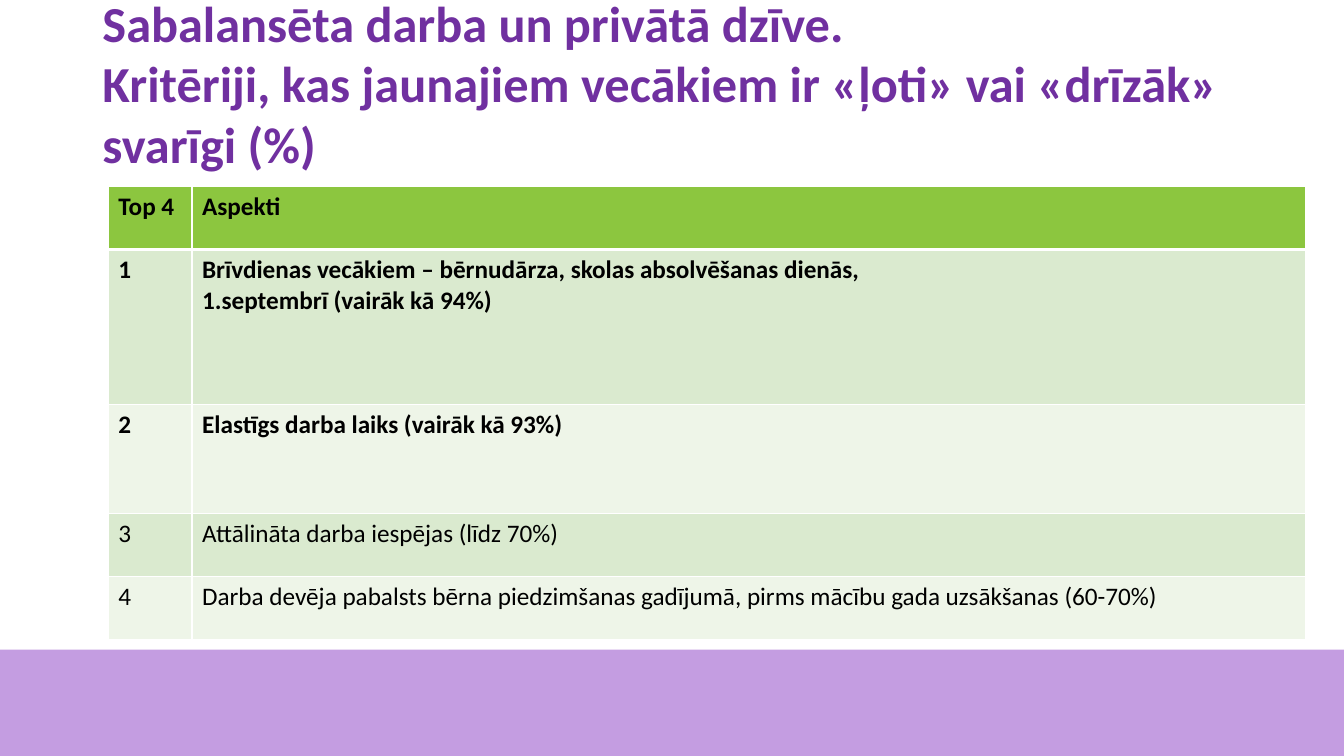
from lxml import etree
from pptx import Presentation
from pptx.dml.color import RGBColor
from pptx.enum import shapes, text
from pptx.oxml import ns
from pptx.util import Pt

PURPLE = RGBColor(0x70, 0x30, 0xA0)
LILAC = RGBColor(0xC4, 0x9D, 0xE1)
GREEN = RGBColor(0x8C, 0xC6, 0x3F)
PALE = RGBColor(0xDA, 0xEA, 0xCF)
LIGHT = RGBColor(0xEE, 0xF5, 0xE8)
BLACK = RGBColor(0, 0, 0)
WHITE = RGBColor(255, 255, 255)


def add_run(para, words, size, color, bold):
    run = para.add_run()
    run.text = words
    font = run.font
    font.name, font.size, font.bold = "Calibri", Pt(size), bold
    font.color.rgb = color


def add_edges(cell, top, base):
    """Draw white cell borders with the given top and bottom widths."""
    props = cell._tc.get_or_add_tcPr()
    edges = {"a:lnL": 1, "a:lnR": 1, "a:lnT": top, "a:lnB": base}
    for spot, (tag, width) in enumerate(edges.items()):
        line = etree.Element(ns.qn(tag), w=str(Pt(width)))
        fill = etree.SubElement(line, ns.qn("a:solidFill"))
        etree.SubElement(fill, ns.qn("a:srgbClr"), val=str(WHITE))
        props.insert(spot, line)


prs = Presentation()
prs.slide_width, prs.slide_height = Pt(960), Pt(540)
slide = prs.slides.add_slide(prs.slide_layouts[5])

band = slide.shapes.add_shape(
    shapes.MSO_SHAPE.RECTANGLE, Pt(0), Pt(464), Pt(960), Pt(76))
band.shadow.inherit = False
band.fill.solid()
band.fill.fore_color.rgb = LILAC
band.line.fill.background()

# Title
title = slide.shapes.title
title.left, title.top = Pt(66), Pt(28.8)
title.width, title.height = Pt(828), Pt(104.4)
frame = title.text_frame
frame.word_wrap = True
frame.auto_size = text.MSO_AUTO_SIZE.NONE
frame.vertical_anchor = text.MSO_ANCHOR.MIDDLE
frame.margin_bottom = Pt(47.6)  # lifts the centred heading
para = frame.paragraphs[0]
para.alignment = text.PP_ALIGN.LEFT
add_run(para, "Sabalansēta darba un privātā dzīve.", 36, PURPLE, True)
para.add_line_break()
add_run(para, "Kritēriji, kas jaunajiem vecākiem ir «ļoti» vai «drīzāk» "
        "svarīgi (%)", 36, PURPLE, True)

# Ranking: row height, rank, lines of the aspect
rows = [
    (45, "Top 4", ["Aspekti"]),
    (110.6, "1", [
        "Brīvdienas vecākiem – bērnudārza, skolas absolvēšanas dienās,",
        "1.septembrī (vairāk kā 94%)"]),
    (77.8, "2", ["Elastīgs darba laiks (vairāk kā 93%)"]),
    (45, "3", ["Attālināta darba iespējas (līdz 70%)"]),
    (45, "4", ["Darba devēja pabalsts bērna piedzimšanas gadījumā, "
               "pirms mācību gada uzsākšanas (60-70%)"]),
]
table = slide.shapes.add_table(
    len(rows), 2, Pt(77.4), Pt(133.2), Pt(855.4), Pt(323.4)).table
table.columns[0].width, table.columns[1].width = Pt(59.8), Pt(795.6)

for r, (height, rank, aspect) in enumerate(rows):
    table.rows[r].height = Pt(height)
    shade = GREEN if r == 0 else PALE if r % 2 else LIGHT
    for c, lines in enumerate([[rank], aspect]):
        cell = table.cell(r, c)
        cell.fill.solid()
        cell.fill.fore_color.rgb = shade
        add_edges(cell, 3 if r == 1 else 1, 3 if r == 0 else 1)
        frame = cell.text_frame
        for i, words in enumerate(lines):
            para = frame.add_paragraph() if i else frame.paragraphs[0]
            add_run(para, words, 18, BLACK, r < 3)

prs.save("out.pptx")
